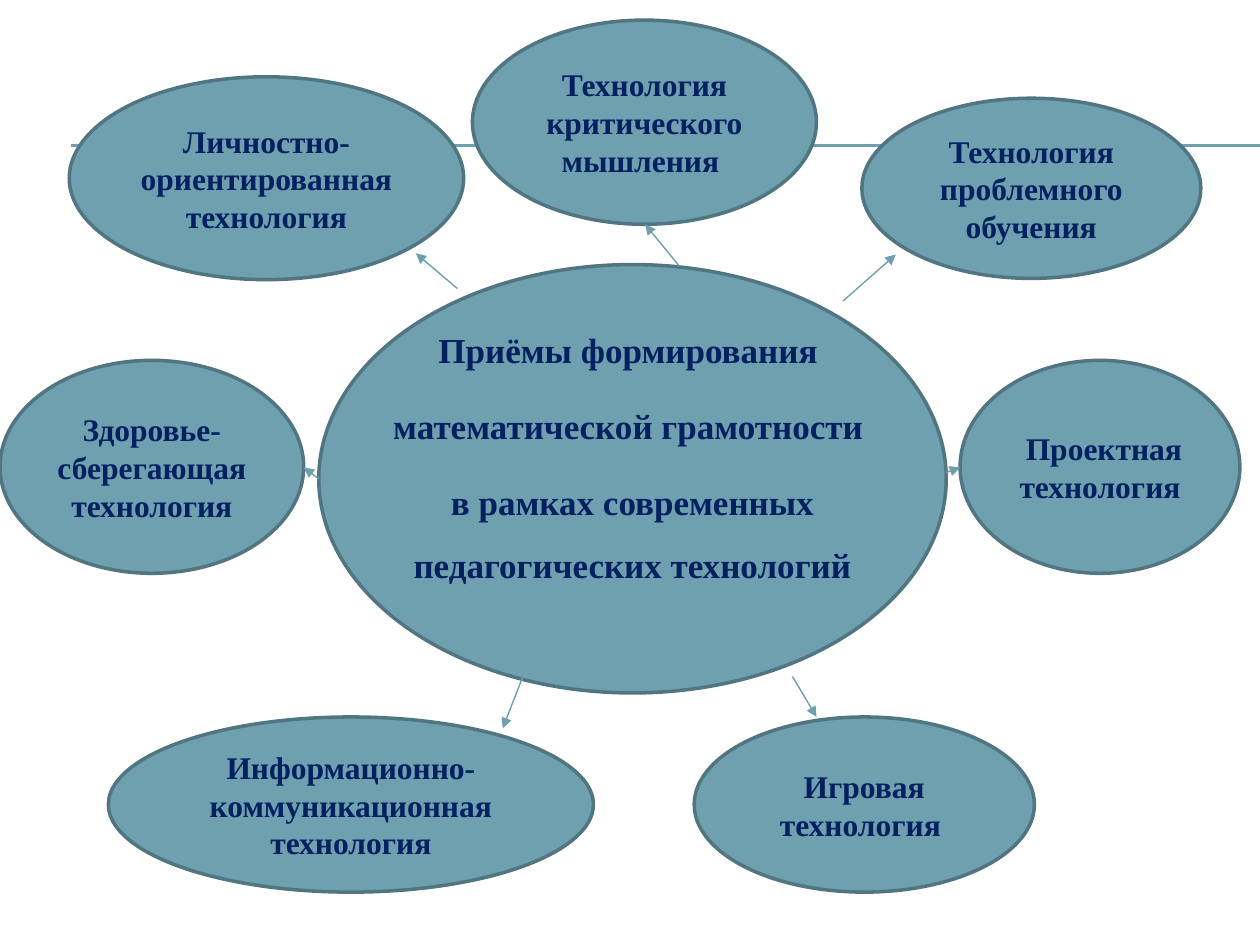
from typing import NamedTuple

from lxml.etree import SubElement
from pptx import Presentation
from pptx.dml.color import RGBColor
from pptx.enum.shapes import MSO_CONNECTOR as Link, MSO_SHAPE as Kind
from pptx.enum.text import MSO_ANCHOR as Anchor, PP_ALIGN as Align
from pptx.oxml.ns import qn
from pptx.util import Inches, Pt

TEAL, EDGE, NAVY = "6EA0B0", "517682", "002060"
FONT = {"name": "Times New Roman", "bold": True}


class Oval(NamedTuple):
    left: float
    top: float
    width: float
    height: float
    text: str = ""


class Line(NamedTuple):
    x1: float
    y1: float
    x2: float
    y2: float


HUB = Oval(2.53, 2.1, 4.98, 3.4)
TOPIC = [
    "Приёмы формирования ",
    "математической грамотности ",
    "в рамках современных педагогических технологий",
]
OVALS = [
    Oval(0.55, 0.61, 3.13, 1.61, "Личностно-ориентированная технология"),
    Oval(0, 2.86, 2.41, 1.69, "Здоровье-сберегающая технология"),
    Oval(0.86, 5.69, 3.85, 1.39, "Информационно-коммуникационная технология"),
    Oval(6.84, 0.78, 2.69, 1.43, "Технология проблемного обучения"),
    Oval(7.62, 2.86, 2.22, 1.69, " Проектная технология"),
    Oval(5.51, 5.69, 2.7, 1.39, "Игровая технология "),
    Oval(3.75, 0.16, 2.73, 1.62, "Технология критического мышления "),
]
RULES = [Line(0.56, y, 10, y) for y in (1.15, 1.16)]
ARROWS = [
    Line(6.69, 2.39, 7.11, 2.02),
    Line(7.51, 3.75, 7.62, 3.71),
    Line(3.63, 2.29, 3.3, 2.01),
    Line(5.39, 2.11, 5.12, 1.78),
    Line(6.29, 5.37, 6.48, 5.69),
    Line(4.15, 5.37, 3.99, 5.78),
    Line(2.53, 3.8, 2.41, 3.71),
]


def paint(part, color: str) -> None:
    """Give a fill, line or font a solid colour."""
    if hasattr(part, "solid"):
        part.solid()
        part = part.fore_color
    else:
        part = part.color
    part.rgb = RGBColor.from_string(color)


def write(para, text: str, size: float) -> None:
    para.alignment = Align.CENTER
    run = para.add_run()
    run.text = text
    for key, value in FONT.items():
        setattr(run.font, key, value)
    run.font.size = Pt(size)
    paint(run.font, NAVY)


def add_oval(slide, oval: Oval) -> None:
    shape = slide.shapes.add_shape(Kind.OVAL, *map(Inches, oval[:4]))
    shape.shadow.inherit = False
    paint(shape.fill, TEAL)
    paint(shape.line, EDGE)
    shape.line.width = Pt(2)
    if oval.text:
        frame = shape.text_frame
        frame.word_wrap = True
        frame.vertical_anchor = Anchor.MIDDLE
        write(frame.paragraphs[0], oval.text, 18)


def add_line(slide, line: Line, width: float, arrow: bool = False) -> None:
    link = slide.shapes.add_connector(Link.STRAIGHT, *map(Inches, line))
    paint(link.line, TEAL)
    link.line.width = Pt(width)
    if arrow:
        SubElement(link.line._get_or_add_ln(), qn("a:tailEnd"), type="triangle")
    SubElement(link._element.spPr, qn("a:effectLst"))


def add_topic(slide) -> None:
    box = slide.shapes.add_textbox(*map(Inches, (2.67, 2.39, 4.7, 2.34)))
    frame = box.text_frame
    frame.word_wrap = True
    for i, text in enumerate(TOPIC):
        para = frame.add_paragraph() if i else frame.paragraphs[0]
        para.line_spacing = 1.5
        para.space_after = Pt(7.5)
        write(para, text, 20)


def main() -> None:
    deck = Presentation()
    deck.slide_width, deck.slide_height = Inches(10), Inches(7.5)
    slide = deck.slides.add_slide(deck.slide_layouts[6])

    # Double rule behind the diagram
    for rule in RULES:
        add_line(slide, rule, 0.75)

    # Hub and its topic
    add_oval(slide, HUB)
    add_topic(slide)

    # Technologies around the hub
    for oval in OVALS:
        add_oval(slide, oval)
    for arrow in ARROWS:
        add_line(slide, arrow, 0.79, arrow=True)

    deck.save("out.pptx")


if __name__ == "__main__":
    main()
